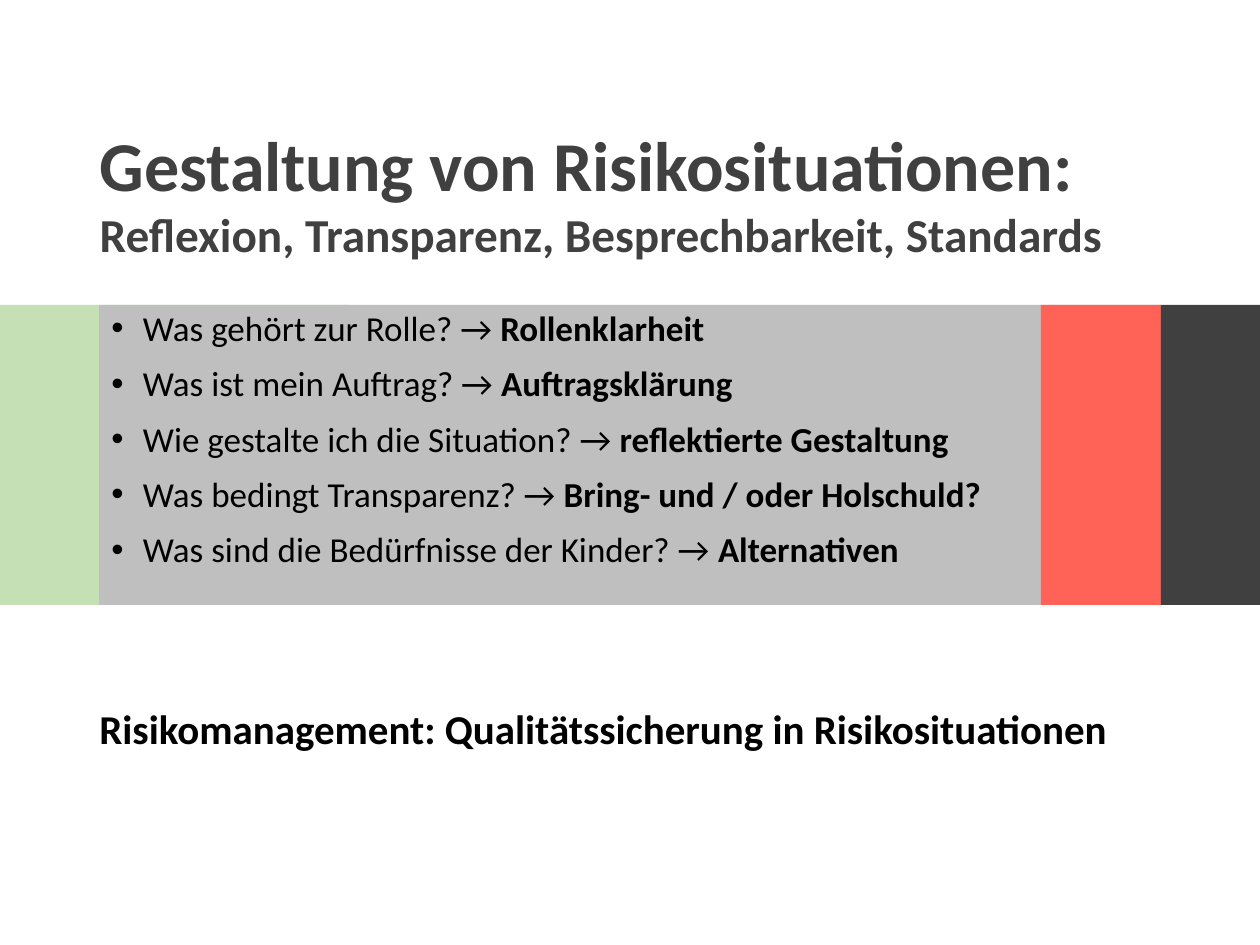
import pptx
import pptx.dml.color
import pptx.enum.shapes
import pptx.enum.text
import pptx.oxml.ns
import pptx.util
from lxml import etree

EMU_PER_PX = 914400 / 126
COLOURS = {
    "green": "C5E0B4",
    "grey": "BFBFBF",
    "red": "FF6257",
    "dark": "404040",
    "black": "000000",
}
ANCHOR = pptx.enum.text.MSO_ANCHOR

QUESTIONS = [
    ("Was gehört zur Rolle?", "Rollenklarheit"),
    ("Was ist mein Auftrag?", "Auftragsklärung"),
    ("Wie gestalte ich die Situation?", "reflektierte Gestaltung"),
    ("Was bedingt Transparenz?", "Bring- und / oder Holschuld?"),
    ("Was sind die Bedürfnisse der Kinder?", "Alternativen"),
]


def emu(px):
    return pptx.util.Emu(round(px * EMU_PER_PX))


def rgb(name):
    return pptx.dml.color.RGBColor.from_string(COLOURS[name])


def add_text(paragraph, text, size=20, colour="black", bold=False):
    run = paragraph.add_run()
    run.text = text
    run.font.name = "Calibri"
    run.font.size = pptx.util.Pt(size)
    run.font.bold = bold
    run.font.color.rgb = rgb(colour)


def set_bullet(paragraph, indent):
    properties = paragraph._p.get_or_add_pPr()
    properties.set("marL", str(indent))
    properties.set("indent", str(-indent))
    font = etree.SubElement(properties, pptx.oxml.ns.qn("a:buFont"))
    font.set("typeface", "Arial")
    bullet = etree.SubElement(properties, pptx.oxml.ns.qn("a:buChar"))
    bullet.set("char", "•")


class SlideBuilder:
    """Holds the current slide and the style of its elements."""

    def __init__(self, presentation):
        self.slide = presentation.slides.add_slide(presentation.slide_layouts[5])

    def prepare_frame(self, shape, anchor):
        frame = shape.text_frame
        frame.word_wrap = True
        frame.auto_size = pptx.enum.text.MSO_AUTO_SIZE.NONE
        frame.vertical_anchor = anchor
        frame.paragraphs[0].alignment = pptx.enum.text.PP_ALIGN.LEFT
        return frame

    def title(self, left, top, width, height, heading, subheading):
        shape = self.slide.shapes.title
        shape.left, shape.top = emu(left), emu(top)
        shape.width, shape.height = emu(width), emu(height)
        paragraph = self.prepare_frame(shape, ANCHOR.MIDDLE).paragraphs[0]
        add_text(paragraph, heading, size=40, colour="dark", bold=True)
        paragraph.add_line_break()
        add_text(paragraph, subheading, size=27, colour="dark", bold=True)

    def block(self, left, top, width, height, colour):
        shape = self.slide.shapes.add_shape(
            pptx.enum.shapes.MSO_SHAPE.RECTANGLE,
            emu(left), emu(top), emu(width), emu(height))
        shape.shadow.inherit = False
        shape.fill.solid()
        shape.fill.fore_color.rgb = rgb(colour)
        shape.line.fill.background()
        return shape

    def questions(self, shape, questions):
        frame = self.prepare_frame(shape, ANCHOR.TOP)
        for index, (question, answer) in enumerate(questions):
            paragraph = frame.add_paragraph() if index else frame.paragraphs[0]
            set_bullet(paragraph, pptx.util.Inches(0.25))
            paragraph.alignment = pptx.enum.text.PP_ALIGN.LEFT
            paragraph.line_spacing = 0.9
            paragraph.space_before = pptx.util.Pt(10 if index else 0)
            add_text(paragraph, f"{question} → ")
            add_text(paragraph, answer, bold=True)

    def text_box(self, left, top, width, height, text, **text_format):
        shape = self.slide.shapes.add_textbox(
            emu(left), emu(top), emu(width), emu(height))
        frame = self.prepare_frame(shape, ANCHOR.MIDDLE)
        add_text(frame.paragraphs[0], text, **text_format)


def main():
    presentation = pptx.Presentation()
    presentation.slide_width = emu(1260)
    presentation.slide_height = emu(945)
    builder = SlideBuilder(presentation)

    builder.title(87, 100, 1086, 183, "Gestaltung von Risikosituationen:",
                  "Reflexion, Transparenz, Besprechbarkeit, Standards")

    band_top, band_height = 305, 300
    builder.block(-4, band_top, 352, band_height, "green")
    panel = builder.block(99, band_top, 1062, band_height, "grey")
    builder.questions(panel, QUESTIONS)
    builder.block(1041, band_top, 120, band_height, "red")
    builder.block(1161, band_top, 99, band_height, "dark")

    builder.text_box(87, 651, 1150, 155,
                     "Risikomanagement: Qualitätssicherung in Risikosituationen",
                     size=23.4, bold=True)
    presentation.save("out.pptx")


if __name__ == "__main__":
    main()
